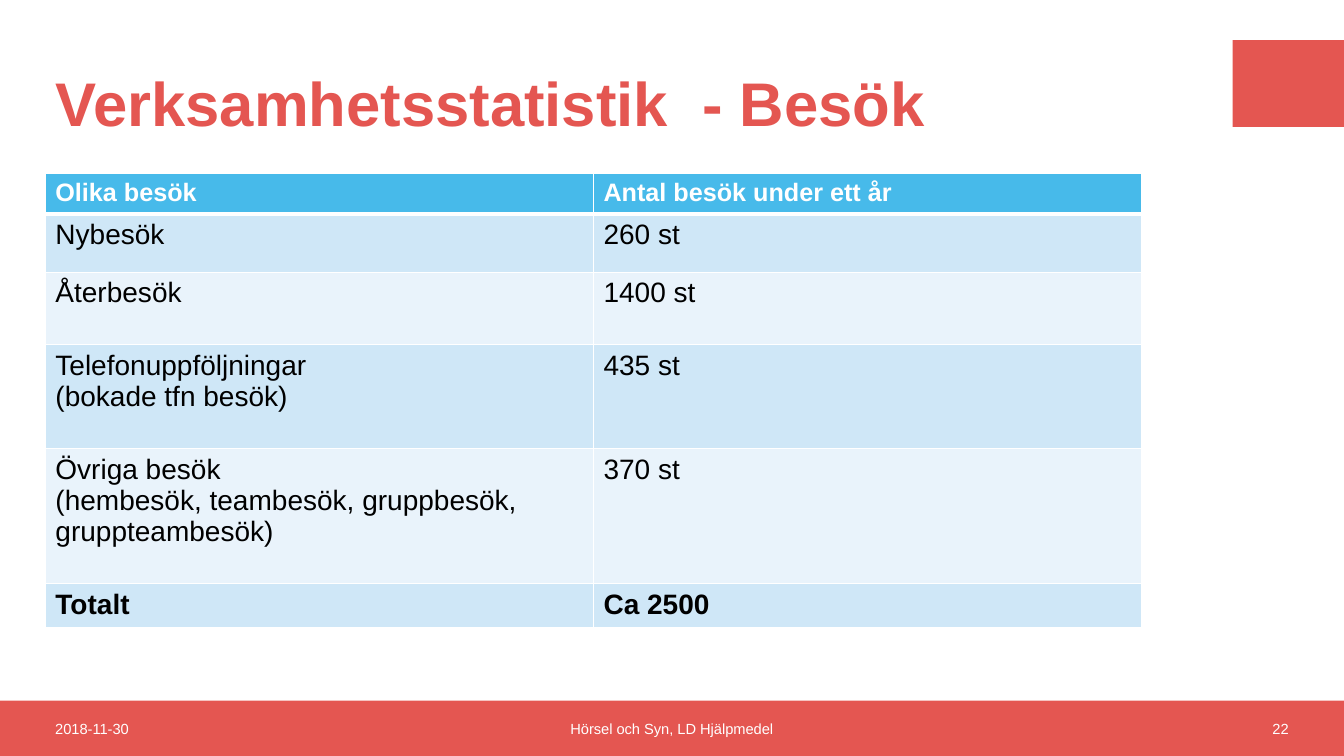
from lxml.etree import SubElement
from pptx import Presentation
from pptx.dml.color import RGBColor
from pptx.enum.shapes import MSO_SHAPE
from pptx.enum.text import MSO_ANCHOR as ANCHOR, MSO_AUTO_SIZE as AUTO_SIZE, PP_ALIGN as ALIGN
from pptx.oxml.ns import qn
from pptx.util import Pt

SLIDE_W, SLIDE_H = 960, 540
MARGIN = 32.4
FONT = "Arial"
COLORS = {
    "red": "E45651",
    "white": "FFFFFF",
    "black": "000000",
    "header": "47BAEA",
    "odd": "CFE7F7",
    "even": "E9F3FB",
}

# Each row: label lines, count, height
VISITS = [
    (["Olika besök"], "Antal besök under ett år", 27.3),
    (["Nybesök"], "260 st", 41.8),
    (["Återbesök"], "1400 st", 51.8),
    (["Telefonuppföljningar", "(bokade tfn besök)"], "435 st", 74.2),
    (["Övriga besök", "(hembesök, teambesök, gruppbesök, gruppteambesök)"], "370 st", 96.5),
    (["Totalt"], "Ca 2500", 29.5),
]


def rgb(name):
    return RGBColor.from_string(COLORS[name])


def points(box):
    return [Pt(length) for length in box]


def write(frame, lines, size, color, bold=False, align=ALIGN.LEFT):
    for index, line in enumerate(lines):
        paragraph = frame.paragraphs[0] if index == 0 else frame.add_paragraph()
        paragraph.alignment = align
        run = paragraph.add_run()
        run.text = line
        run.font.name = FONT
        run.font.size = Pt(size)
        run.font.bold = bold
        run.font.color.rgb = rgb(color)


def add_block(slide, box):
    block = slide.shapes.add_shape(MSO_SHAPE.RECTANGLE, *points(box))
    block.shadow.inherit = False
    block.fill.solid()
    block.fill.fore_color.rgb = rgb("red")
    block.line.fill.background()


def add_title(slide, box, text):
    title = slide.shapes.title
    title.left, title.top, title.width, title.height = points(box)
    frame = title.text_frame
    frame.auto_size = AUTO_SIZE.NONE
    frame.word_wrap = True
    frame.vertical_anchor = ANCHOR.MIDDLE
    write(frame, [text], 44, "red", bold=True)
    frame.paragraphs[0].line_spacing = 0.9


def add_footer(slide, box):
    left, top, width, height = box
    add_block(slide, box)
    side, middle = 216, 396
    parts = [
        ("2018-11-30", left + MARGIN, side, ALIGN.LEFT),
        ("Hörsel och Syn, LD Hjälpmedel", left + (width - middle) / 2, middle, ALIGN.CENTER),
        ("22", left + width - MARGIN - side, side, ALIGN.RIGHT),
    ]
    for text, part_left, part_width, align in parts:
        label = slide.shapes.add_textbox(*points((part_left, top, part_width, height)))
        frame = label.text_frame
        frame.word_wrap = True
        frame.vertical_anchor = ANCHOR.MIDDLE
        write(frame, [text], 10.5, "white", align=align)


def add_borders(cell, widths):
    properties = cell._tc.get_or_add_tcPr()
    for side, width in widths.items():
        line = SubElement(properties, qn(f"a:ln{side}"), w=str(Pt(width)))
        fill = SubElement(line, qn("a:solidFill"))
        SubElement(fill, qn("a:srgbClr"), val=COLORS["white"])


def add_visits_table(slide, box):
    table = slide.shapes.add_table(len(VISITS), 2, *points(box)).table
    for column in table.columns:
        column.width = Pt(box[2] / 2)
    last = len(VISITS) - 1
    for index, (label, count, height) in enumerate(VISITS):
        table.rows[index].height = Pt(height)
        is_header = index == 0
        shade = "header" if is_header else "odd" if index % 2 else "even"
        # The heavy rule lies between the header and the first row
        widths = {"L": 1, "R": 1, "T": 3 if index == 1 else 1, "B": 3 if is_header else 1}
        for cell, lines in zip(table.rows[index].cells, (label, [count])):
            add_borders(cell, widths)
            cell.fill.solid()
            cell.fill.fore_color.rgb = rgb(shade)
            write(cell.text_frame, lines, 18 if is_header else 20,
                  "white" if is_header else "black", bold=index in (0, last))


def build_visits_slide(deck):
    slide = deck.slides.add_slide(deck.slide_layouts[5])
    # Red band with date, unit and page number
    add_footer(slide, (0, 500.4, SLIDE_W, 39.6))
    # Corner block
    add_block(slide, (880.5, 28.6, 79.5, 62.1))
    # Heading and table
    add_title(slide, (MARGIN, 28.8, 836, 95), "Verksamhetsstatistik  - Besök")
    add_visits_table(slide, (MARGIN, 123.9, 783, sum(row[2] for row in VISITS)))


def main():
    deck = Presentation()
    deck.slide_width, deck.slide_height = Pt(SLIDE_W), Pt(SLIDE_H)
    build_visits_slide(deck)
    deck.save("out.pptx")


if __name__ == "__main__":
    main()
